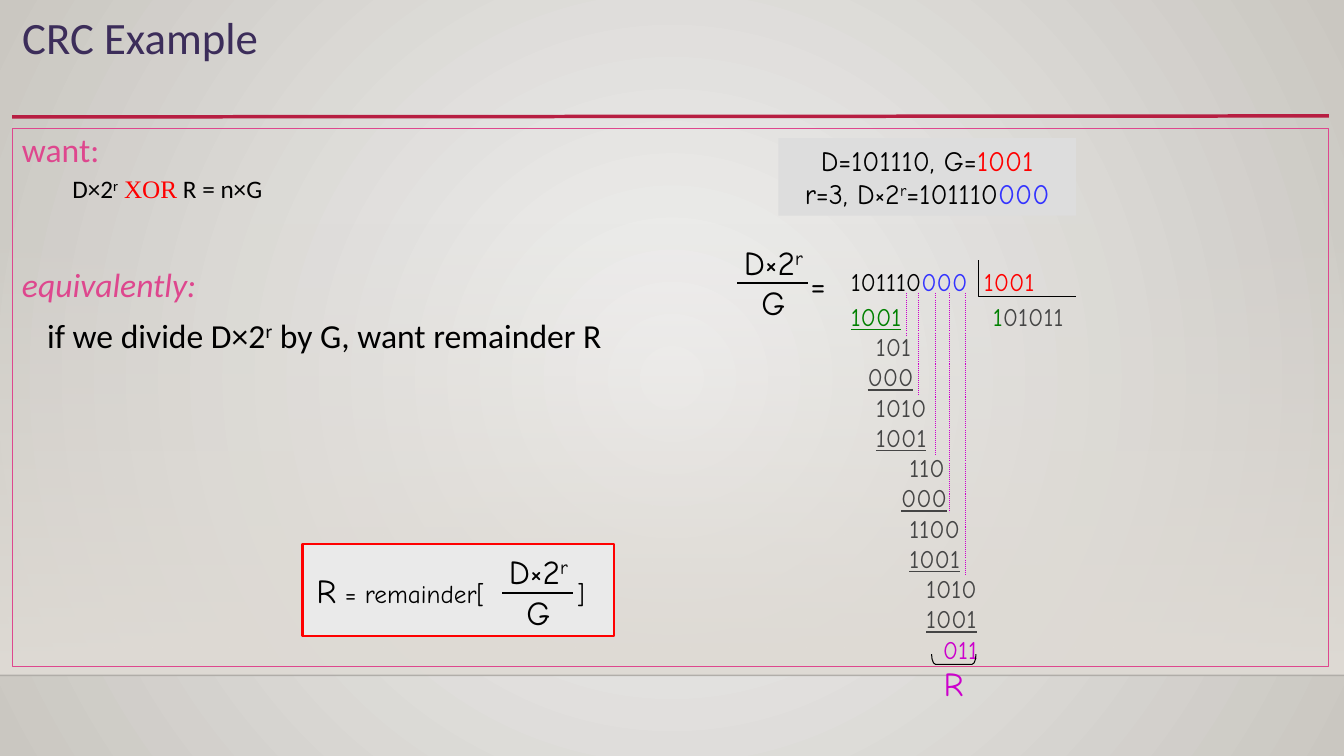
from lxml.etree import SubElement
from pptx import Presentation
from pptx.dml.color import RGBColor
from pptx.enum.dml import MSO_LINE
from pptx.enum.shapes import MSO_CONNECTOR, MSO_SHAPE
from pptx.enum.text import MSO_ANCHOR, MSO_AUTO_SIZE, PP_ALIGN
from pptx.oxml import parse_xml
from pptx.oxml.ns import nsdecls, qn
from pptx.util import Inches, Pt

COLORS = {
    "black": "000000", "title": "3C2D5A", "pink": "DE478E", "crimson": "B71E42",
    "red": "FF0000", "blue": "3333FF", "green": "008000", "gray": "454545",
    "magenta": "CC00CC", "panel": "DDDDDD", "result": "EAEAEA",
    "center": "F2F2F2", "edge": "CAC7C1", "floor": "DFDBD5",
}
HAND = "Comic Neue"
SPACE = 0.083  # indent step of the long division
POWER = [("D×2", {}), ("r", {"raised": True})]


def rgb(name):
    return RGBColor.from_string(COLORS[name])


def gradient(stops, direction):
    """Build a gradient fill from (position, color, opacity) stops."""
    marks = "".join(
        f'<a:gs pos="{position * 1000}"><a:srgbClr val="{COLORS[color]}">'
        f'<a:alpha val="{opacity * 1000}"/></a:srgbClr></a:gs>'
        for position, color, opacity in stops)
    return parse_xml(f'<a:gradFill {nsdecls("a")} rotWithShape="1">'
                     f'<a:gsLst>{marks}</a:gsLst>{direction}</a:gradFill>')


def add_line(slide, start, end, color="black", width=0.75, dotted=False, opacity=100):
    line = slide.shapes.add_connector(
        MSO_CONNECTOR.STRAIGHT, *(Inches(value) for value in (*start, *end)))
    line.line.color.rgb = rgb(color)
    line.line.width = Pt(width)
    if dotted:
        line.line.dash_style = MSO_LINE.ROUND_DOT
    if opacity < 100:
        tint = line.line._ln.find(".//" + qn("a:srgbClr"))
        SubElement(tint, qn("a:alpha")).set("val", str(opacity * 1000))
    SubElement(line._element.spPr, qn("a:effectLst"))
    return line


def add_box(slide, place, fill=None, outline=None, width=0.75, kind=MSO_SHAPE.RECTANGLE):
    box = slide.shapes.add_shape(kind, *(Inches(value) for value in place))
    box.shadow.inherit = False
    if fill:
        box.fill.solid()
        box.fill.fore_color.rgb = rgb(fill)
    else:
        box.fill.background()
    if outline:
        box.line.color.rgb = rgb(outline)
        box.line.width = Pt(width)
    else:
        box.line.fill.background()
    return box


def add_text(slide, place):
    return slide.shapes.add_textbox(*(Inches(value) for value in place))


def write(box, paragraphs, align=PP_ALIGN.LEFT, wrap=True):
    """Write (spans, format) paragraphs; a span is (text, options)."""
    frame = box.text_frame
    frame.word_wrap = wrap
    frame.vertical_anchor = MSO_ANCHOR.TOP
    for index, (spans, style) in enumerate(paragraphs):
        para = frame.add_paragraph() if index else frame.paragraphs[0]
        properties = para._p.get_or_add_pPr()
        properties.set("marL", str(Inches(style.get("indent", 0))))
        if "tab" in style:
            tabs = SubElement(properties, qn("a:tabLst"))
            SubElement(tabs, qn("a:tab"), pos=str(Inches(style["tab"])), algn="l")
        para.alignment = align
        if "spacing" in style:
            para.line_spacing = style["spacing"]
        if "before" in style:
            para.space_before = Pt(style["before"])
        para.font.name = style.get("font", HAND)
        para.font.size = Pt(style.get("size", 18))
        para.font.color.rgb = rgb(style.get("color", "black"))
        para.font.italic = style.get("italic", False)
        for text, options in spans:
            span = para.add_run()
            span.text = text
            if "color" in options:
                span.font.color.rgb = rgb(options["color"])
            if "font" in options:
                span.font.name = options["font"]
            if "size" in options:
                span.font.size = Pt(options["size"])
            if options.get("underline"):
                span.font.underline = True
            if options.get("raised"):
                span._r.get_or_add_rPr().set("baseline", "30000")


def add_fraction(slide, left, top):
    box = add_text(slide, (left, top, 1.46, 0.91))
    write(box, [(POWER, {"size": 24}), ([("G", {})], {"size": 24})], PP_ALIGN.CENTER)
    add_line(slide, (left + 0.37, top + 0.46), (left + 1.07, top + 0.46), width=1.5)


def add_backdrop(slide):
    slide.background.fill.solid()
    solid = slide.background._cSld.find(".//" + qn("a:solidFill"))
    solid.getparent().replace(solid, gradient(
        [(0, "center", 100), (100, "edge", 100)],
        '<a:path path="circle"><a:fillToRect l="50000" t="50000" r="50000" b="50000"/></a:path>'))
    floor = add_box(slide, (0, 2.21, 13.33, 4.49))
    empty = floor._element.spPr.find(qn("a:noFill"))
    empty.getparent().replace(empty, gradient(
        [(0, "floor", 0), (100, "floor", 100)], '<a:lin ang="5400000" scaled="0"/>'))
    add_line(slide, (0, 6.7), (13.33, 6.7), width=1, opacity=20)
    add_line(slide, (0.12, 1.16), (13.18, 1.15), "crimson", 2.5)


def add_title(slide):
    title = slide.shapes.title
    title.left, title.top, title.width, title.height = (
        Inches(value) for value in (0.12, 0.11, 11.75, 0.91))
    title.text_frame.auto_size = MSO_AUTO_SIZE.NONE
    write(title, [([("CRC Example", {})],
                   {"font": "Calibri", "size": 32, "color": "title", "spacing": 0.9})])


def add_statement(slide):
    base = {"font": "Calibri", "size": 24, "spacing": 0.9}
    box = add_box(slide, (0.12, 1.28, 13.06, 5.33), outline="pink")
    write(box, [
        ([("want:", {})], {**base, "color": "pink"}),
        (POWER + [(" ", {}), ("XOR", {"color": "red", "font": "Times New Roman"}),
                  (" R = n×G", {})], {**base, "size": 18, "indent": 0.5, "before": 5}),
        ([("equivalently:", {})], {**base, "color": "pink", "italic": True, "before": 46}),
        ([("if we divide ", {})] + POWER + [(" by G, want remainder R", {})],
         {**base, "indent": 0.25, "before": 10}),
    ])


def add_remainder(slide):
    add_box(slide, (3, 5.4, 3.09, 0.91), "result", "red", 1.5)
    write(add_text(slide, (3.04, 5.6, 3.04, 0.5)),
          [([("R", {"size": 24}), (" = remainder[\t]", {})], {"tab": 2.58})])
    add_fraction(slide, 4.61, 5.42)


def add_givens(slide):
    panel = add_box(slide, (7.72, 1.37, 2.95, 0.77), "panel")
    write(panel, [
        ([("D=101110, G=", {}), ("1001", {"color": "red"})], {"size": 20}),
        ([("r=3, ", {})] + POWER + [("=101110", {}), ("000", {"color": "blue"})], {"size": 20}),
    ], PP_ALIGN.CENTER, wrap=False)


def add_division(slide):
    add_fraction(slide, 6.94, 2.35)
    write(add_text(slide, (7.94, 2.57, 0.37, 0.5)), [([("=", {})], {"size": 24})], wrap=False)

    # Dividend and divisor
    write(add_text(slide, (8.34, 2.59, 2.1, 0.4)), [
        ([("101110", {}), ("000", {"color": "blue"}), ("\t1001", {"color": "red"})],
         {"tab": 1.32})])
    corner = slide.shapes.build_freeform(Inches(9.71), Inches(2.58), scale=1.0)
    corner.add_line_segments([(Inches(9.71), Inches(2.94)), (Inches(10.67), Inches(2.94))],
                             close=False)
    bracket = corner.convert_to_shape()
    bracket.shadow.inherit = False
    bracket.fill.background()
    bracket.line.color.rgb = rgb("black")
    bracket.line.width = Pt(0.75)

    # Quotient and subtraction steps: (digits, indent), every second one underlined
    steps = [("101", 3), ("000", 2), ("1010", 3), ("1001", 3), ("110", 7),
             ("000", 6), ("1100", 7), ("1001", 7), ("1010", 9), ("1001", 9)]
    rows = [([("1001", {"underline": True}), ("\t1", {}), ("01011", {"color": "gray"})],
             {"color": "green", "tab": 1.41})]
    rows += [([(digits, {"underline": number % 2 == 1})],
              {"color": "gray", "indent": indent * SPACE})
             for number, (digits, indent) in enumerate(steps)]
    rows.append(([("011", {})], {"color": "magenta", "indent": 11 * SPACE}))
    write(add_text(slide, (8.34, 2.94, 2.96, 3.7)), rows)

    # Digits brought down
    for x, bottom in [(8.99, 3.33), (9.11, 3.93), (9.28, 4.51), (9.42, 5.08), (9.58, 5.71)]:
        add_line(slide, (x, 2.91), (x, bottom), "magenta", dotted=True)

    # Remainder label
    write(add_text(slide, (9.26, 6.53, 0.41, 0.5)),
          [([("R", {})], {"size": 24, "color": "magenta"})], wrap=False)
    brace = add_box(slide, (9.41, 6.32, 0.1, 0.44), outline="black", kind=MSO_SHAPE.LEFT_BRACKET)
    brace.adjustments[0] = 0.38
    brace.rotation = 270


def main():
    deck = Presentation()
    deck.slide_width, deck.slide_height = Inches(13.33), Inches(7.5)
    slide = deck.slides.add_slide(deck.slide_layouts[5])
    add_backdrop(slide)
    add_title(slide)
    add_statement(slide)
    add_remainder(slide)
    add_givens(slide)
    add_division(slide)
    deck.save("out.pptx")


if __name__ == "__main__":
    main()
